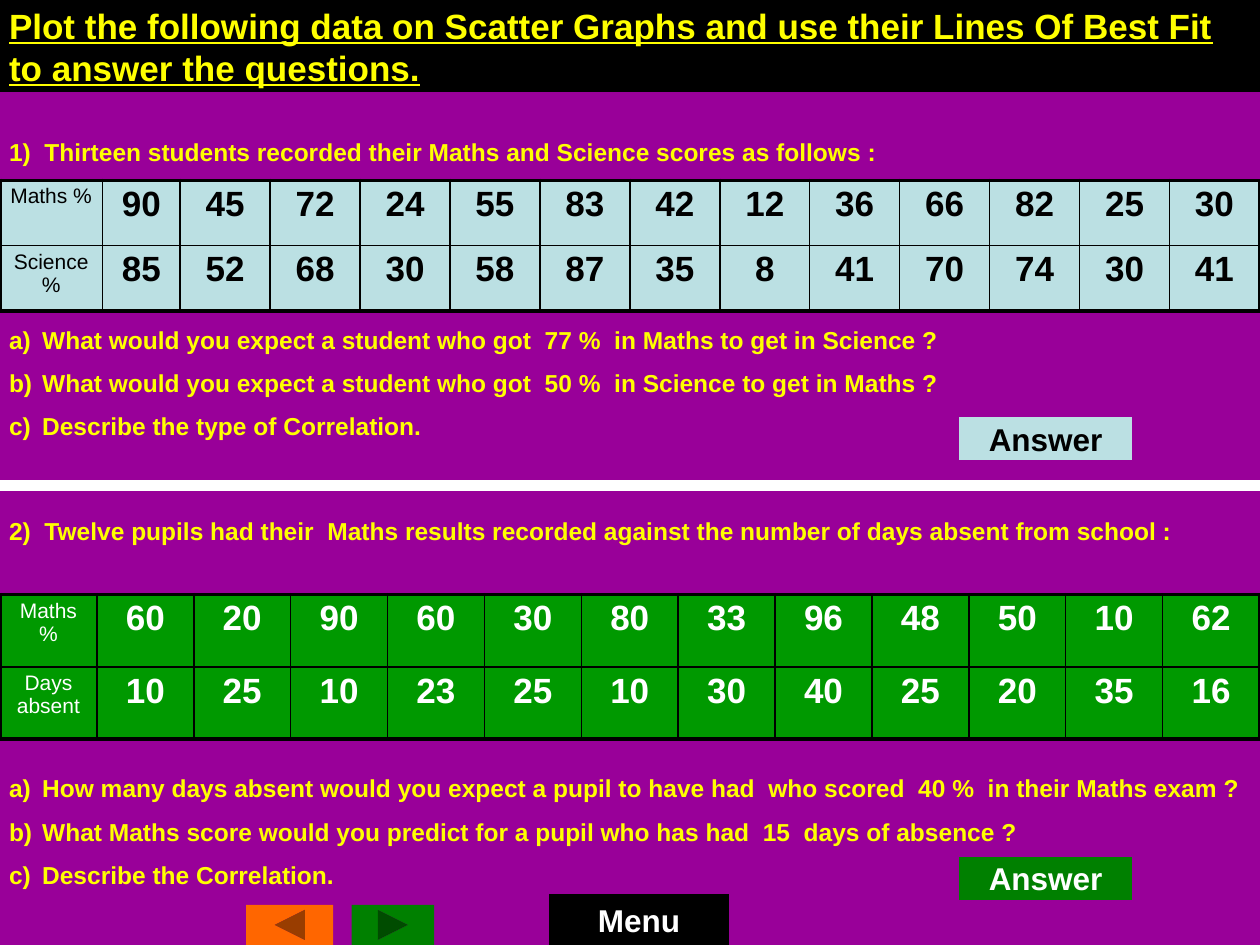
from dataclasses import dataclass

from lxml import etree
from pptx import Presentation
from pptx.dml.color import RGBColor
from pptx.enum.shapes import MSO_CONNECTOR, MSO_SHAPE
from pptx.enum.text import MSO_ANCHOR, PP_ALIGN
from pptx.oxml.ns import qn
from pptx.util import Pt

RECTANGLE = MSO_SHAPE.RECTANGLE
BLANK_BUTTON = MSO_SHAPE.ACTION_BUTTON_CUSTOM
NEXT_BUTTON = MSO_SHAPE.ACTION_BUTTON_FORWARD_OR_NEXT
PREVIOUS_BUTTON = MSO_SHAPE.ACTION_BUTTON_BACK_OR_PREVIOUS
STRAIGHT = MSO_CONNECTOR.STRAIGHT
LEFT, CENTER = PP_ALIGN.LEFT, PP_ALIGN.CENTER
MIDDLE = MSO_ANCHOR.MIDDLE

WIDTH, HEIGHT = 720, 540
INSET_X, INSET_Y = 5.2, 2.6
LIST_INDENT = 18.9
THICK, THIN = 2.25, 1
BLACK, WHITE, YELLOW = "000000", "FFFFFF", "FFFF00"
PURPLE, ORANGE = "990099", "FF6600"
PALE_BLUE, DARK_GREEN, GREEN = "BBE0E3", "008000", "009900"


@dataclass
class TextBlock:
    top: float
    width: float
    height: float
    lines: list[str]
    numbered: bool = False


@dataclass
class DataTable:
    top: float
    row_height: float
    column_widths: list[float]
    rows: list[list]
    fill: str
    color: str


@dataclass
class Button:
    kind: int
    left: float
    top: float
    width: float
    height: float
    fill: str
    text: str = ""
    color: str = WHITE


TEXT_BLOCKS = [
    TextBlock(75.6, WIDTH, 22.3, [
        "1)  Thirteen students recorded their Maths and Science scores as follows :"]),
    TextBlock(182.9, 704, 72.7, [
        "What would you expect a student who got  77 %  in Maths to get in Science ?",
        "What would you expect a student who got  50 %  in Science to get in Maths ?",
        "Describe the type of Correlation."], numbered=True),
    TextBlock(292.3, WIDTH, 22.3, [
        "2)  Twelve pupils had their  Maths results recorded against the number of days absent from school :"]),
    TextBlock(439.2, WIDTH, 97.9, [
        "How many days absent would you expect a pupil to have had  who scored  40 %  in their Maths exam ?",
        "What Maths score would you predict for a pupil who has had  15  days of absence ?",
        "Describe the Correlation."], numbered=True),
]

TABLES = [
    DataTable(103, 37.4, [58.5, 44.5] + [(WIDTH - 103) / 12] * 12, [
        ["Maths %", 90, 45, 72, 24, 55, 83, 42, 12, 36, 66, 82, 25, 30],
        ["Science %", 85, 52, 68, 30, 58, 87, 35, 8, 41, 70, 74, 30, 41],
    ], PALE_BLUE, BLACK),
    DataTable(339.8, 41.3, [WIDTH / 13] * 13, [
        ["Maths %", 60, 20, 90, 60, 30, 80, 33, 96, 48, 50, 10, 62],
        ["Days absent", 10, 25, 10, 23, 25, 10, 30, 40, 25, 20, 35, 16],
    ], GREEN, WHITE),
]

BUTTONS = [
    Button(NEXT_BUTTON, 200.9, 517, 47.2, 23, DARK_GREEN),
    Button(PREVIOUS_BUTTON, 140.7, 517, 49.7, 23, ORANGE),
    Button(BLANK_BUTTON, 548, 238.3, 99, 24.5, PALE_BLUE, "Answer", BLACK),
    Button(BLANK_BUTTON, 548, 489.6, 99, 24.5, DARK_GREEN, "Answer"),
    Button(BLANK_BUTTON, 313.7, 511, 103, 29, BLACK, "Menu"),
]


def rgb(value: str) -> RGBColor:
    return RGBColor.from_string(value)


def write_text(paragraph, text: str, *, size: float, color: str, bold: bool = True,
               underline: bool = False, align=LEFT, space_before: float = 0) -> None:
    paragraph.alignment = align
    paragraph.space_before = Pt(space_before)
    run = paragraph.add_run()
    run.text = text
    font = run.font
    font.name, font.size, font.bold = "Arial", Pt(size), bold
    font.underline = underline
    font.color.rgb = rgb(color)


def set_insets(target) -> None:
    target.margin_left = target.margin_right = Pt(INSET_X)
    target.margin_top = target.margin_bottom = Pt(INSET_Y)


def add_filled_shape(slide, kind, left: float, top: float, width: float, height: float, fill: str):
    shape = slide.shapes.add_shape(kind, Pt(left), Pt(top), Pt(width), Pt(height))
    shape.shadow.inherit = False
    shape.fill.solid()
    shape.fill.fore_color.rgb = rgb(fill)
    shape.line.fill.background()
    return shape


def add_title(slide, text: str) -> None:
    shape = add_filled_shape(slide, RECTANGLE, 0, 0, WIDTH, 52.6, BLACK)
    frame = shape.text_frame
    frame.word_wrap = True
    frame.vertical_anchor = MSO_ANCHOR.TOP
    set_insets(frame)
    write_text(frame.paragraphs[0], text, size=20, color=YELLOW, underline=True)


def number_paragraph(paragraph) -> None:
    properties = paragraph._p.get_or_add_pPr()
    properties.set("marL", str(Pt(LIST_INDENT)))
    properties.set("indent", str(-Pt(LIST_INDENT)))
    etree.SubElement(properties, qn("a:buAutoNum"), type="alphaLcParenR")


def add_text_block(slide, block: TextBlock) -> None:
    shape = slide.shapes.add_textbox(0, Pt(block.top), Pt(block.width), Pt(block.height))
    frame = shape.text_frame
    frame.word_wrap = True
    set_insets(frame)
    for index, line in enumerate(block.lines):
        paragraph = frame.add_paragraph() if index else frame.paragraphs[0]
        write_text(paragraph, line, size=14, color=YELLOW, space_before=8 if index else 0)
        if block.numbered:
            number_paragraph(paragraph)


def set_borders(cell, widths: dict[str, float]) -> None:
    properties = cell._tc.get_or_add_tcPr()
    for position, (side, width) in enumerate(widths.items()):
        border = etree.Element(qn(f"a:{side}"), w=str(Pt(width)))
        fill = etree.SubElement(border, qn("a:solidFill"))
        etree.SubElement(fill, qn("a:srgbClr"), val=BLACK)
        properties.insert(position, border)


def add_data_table(slide, data: DataTable) -> None:
    row_count, column_count = len(data.rows), len(data.column_widths)
    table = slide.shapes.add_table(row_count, column_count, 0, Pt(data.top), Pt(WIDTH),
                                   Pt(data.row_height * row_count)).table
    table.first_row = table.horz_banding = False
    for column, width in zip(table.columns, data.column_widths):
        column.width = Pt(width)
    for row_index, values in enumerate(data.rows):
        table.rows[row_index].height = Pt(data.row_height)
        for column_index, value in enumerate(values):
            cell = table.cell(row_index, column_index)
            set_insets(cell)
            cell.fill.solid()
            cell.fill.fore_color.rgb = rgb(data.fill)
            is_label = column_index == 0
            write_text(cell.text_frame.paragraphs[0], str(value), size=12 if is_label else 20,
                       color=data.color, bold=not is_label, align=CENTER)
            set_borders(cell, {
                "lnL": THICK if is_label else THIN,
                "lnR": THICK if column_index == column_count - 1 else THIN,
                "lnT": THICK if row_index == 0 else THIN,
                "lnB": THICK if row_index == row_count - 1 else THIN,
            })


def add_divider(slide, top: float) -> None:
    line = slide.shapes.add_connector(STRAIGHT, 0, Pt(top), Pt(WIDTH), Pt(top))
    line.line.color.rgb = rgb(WHITE)
    line.line.width = Pt(6)
    etree.SubElement(line._element.spPr, qn("a:effectLst"))


def add_button(slide, button: Button) -> None:
    shape = add_filled_shape(slide, button.kind, button.left, button.top,
                             button.width, button.height, button.fill)
    if button.text:
        frame = shape.text_frame
        frame.word_wrap = False
        frame.vertical_anchor = MIDDLE
        write_text(frame.paragraphs[0], button.text, size=18, color=button.color, align=CENTER)


def main() -> None:
    presentation = Presentation()
    presentation.slide_width, presentation.slide_height = Pt(WIDTH), Pt(HEIGHT)
    slide = presentation.slides.add_slide(presentation.slide_layouts[6])
    slide.background.fill.solid()
    slide.background.fill.fore_color.rgb = rgb(PURPLE)
    add_title(slide, "Plot the following data on Scatter Graphs and use their "
                     "Lines Of Best Fit to answer the questions.")
    for data in TABLES:
        add_data_table(slide, data)
    for block in TEXT_BLOCKS:
        add_text_block(slide, block)
    add_divider(slide, 277.4)
    for button in BUTTONS:
        add_button(slide, button)
    presentation.save("out.pptx")


if __name__ == "__main__":
    main()
